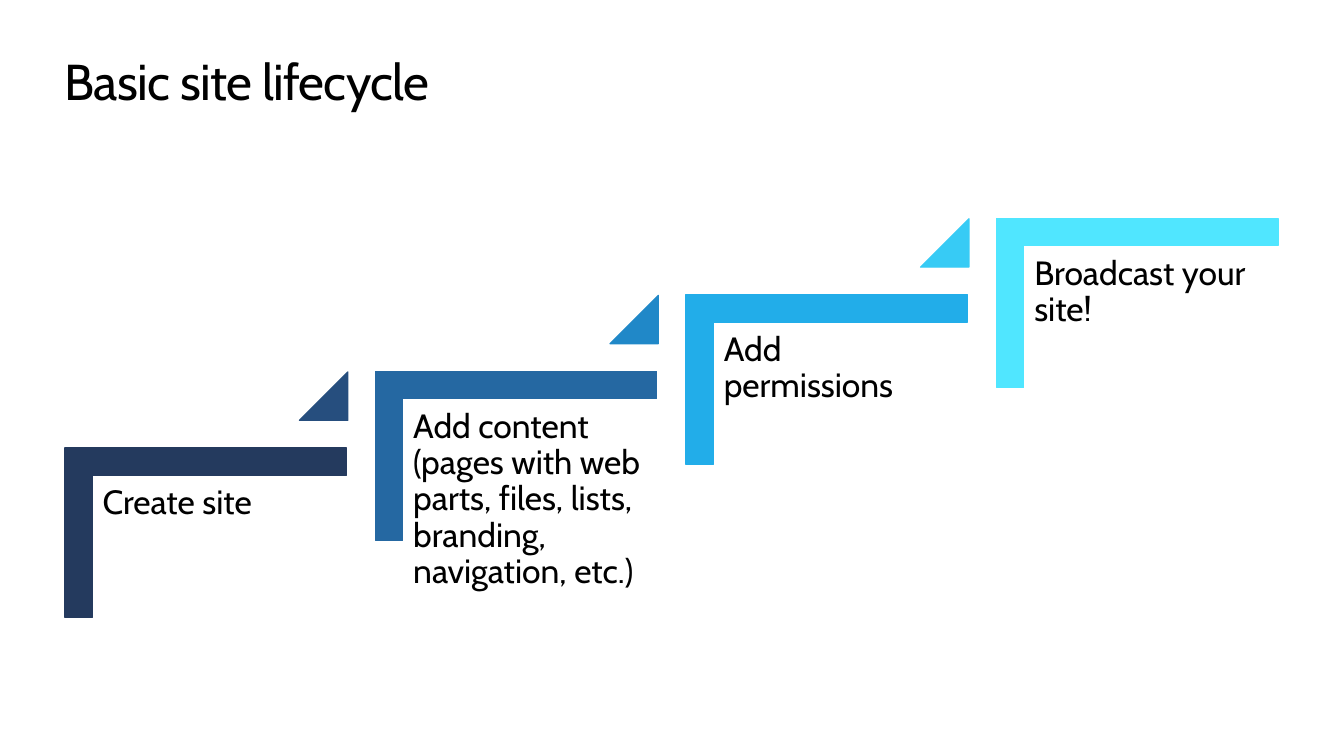
import pptx
import pptx.dml.color
import pptx.enum.shapes
import pptx.enum.text
import pptx.util

Inches = pptx.util.Inches
Pt = pptx.util.Pt
SHAPE = pptx.enum.shapes.MSO_SHAPE

COLOURS = {
    "text": "000000",
    "create": "243A5E",
    "create_next": "264E7E",
    "content": "2568A2",
    "content_next": "2088C8",
    "permissions": "22ADE9",
    "permissions_next": "37CBF5",
    "broadcast": "50E6FF",
}

# Wording, corner colour and colour of the triangle leading to the next step
STEPS = [
    ("Create site", "create", "create_next"),
    ("Add content (pages with web parts, files, lists, branding, navigation, etc.)",
     "content", "content_next"),
    ("Add permissions", "permissions", "permissions_next"),
    ("Broadcast your site!", "broadcast", None),
]
STEP_RIGHT = 3.08
STEP_UP = 0.76


def colour(name):
    return pptx.dml.color.RGBColor.from_string(COLOURS[name])


def set_all(target, values):
    for name, value in values.items():
        setattr(target, name, value)


def add_text(shapes, words, place, size, inset, line_spacing=1.0, tracking=None):
    box = shapes.add_textbox(*map(Inches, place))
    margin = Inches(inset)
    set_all(box.text_frame, {
        "word_wrap": True,
        "vertical_anchor": pptx.enum.text.MSO_ANCHOR.TOP,
        "margin_left": margin, "margin_right": margin,
        "margin_top": margin, "margin_bottom": margin,
    })
    para = box.text_frame.paragraphs[0]
    para.line_spacing = line_spacing
    span = para.add_run()
    span.text = words
    set_all(span.font, {"name": "Cabin", "size": Pt(size)})
    span.font.color.rgb = colour("text")
    if tracking is not None:
        span._r.get_or_add_rPr().set("spc", str(int(tracking * 100)))


def add_solid(shapes, kind, place, colour_name, adjustments, rotation=0):
    shape = shapes.add_shape(kind, *map(Inches, place))
    shape.rotation = rotation
    shape.shadow.inherit = False
    for index, value in enumerate(adjustments):
        shape.adjustments[index] = value
    shape.fill.solid()
    shape.fill.fore_color.rgb = colour(colour_name)
    shape.line.color.rgb = colour(colour_name)
    shape.line.width = Pt(0.85)


def add_step(shapes, number, words, corner_colour, triangle_colour):
    right, up = number * STEP_RIGHT, number * STEP_UP
    add_solid(shapes, SHAPE.CORNER, (1.2 + right, 3.89 - up, 1.68, 2.79),
              corner_colour, (0.16, 0.16), rotation=90)
    add_text(shapes, words, (0.92 + right, 4.72 - up, 2.52, 2.21),
             size=24, inset=0.1, line_spacing=0.9)
    if triangle_colour:
        add_solid(shapes, SHAPE.ISOSCELES_TRIANGLE,
                  (2.97 + right, 3.69 - up, 0.48, 0.48), triangle_colour, (1,))


def main():
    deck = pptx.Presentation()
    set_all(deck, {"slide_width": Inches(13.33), "slide_height": Inches(7.5)})
    page = deck.slides.add_slide(deck.slide_layouts[6])

    # Title
    add_text(page.shapes, "Basic site lifecycle", (0.64, 0.5, 12.05, 0.61),
             size=36, inset=0, tracking=-0.5)

    # Rising staircase of steps
    staircase = page.shapes.add_group_shape()
    for number, step in enumerate(STEPS):
        add_step(staircase.shapes, number, *step)

    deck.save("out.pptx")


if __name__ == "__main__":
    main()
